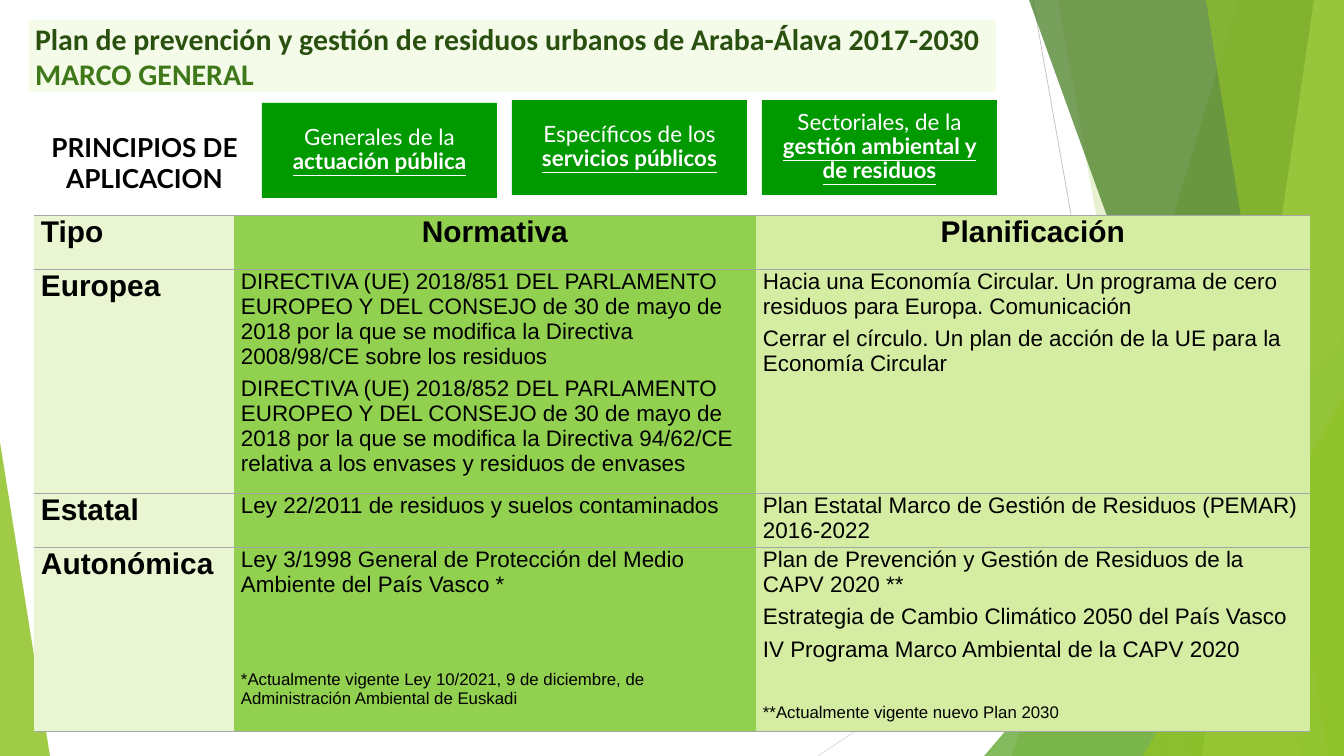
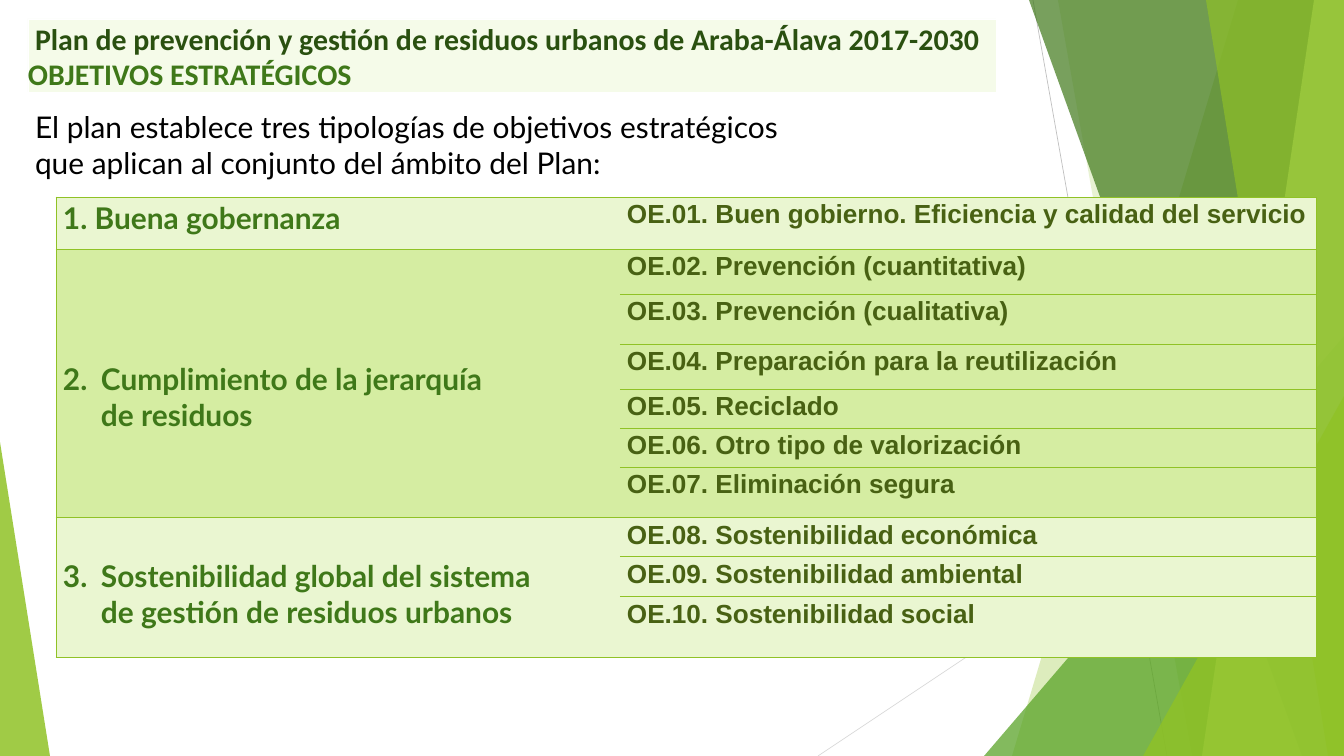
from lxml import etree
from pptx import Presentation
from pptx.dml.color import RGBColor
from pptx.enum.shapes import MSO_CONNECTOR, MSO_SHAPE
from pptx.enum.text import MSO_ANCHOR, MSO_AUTO_SIZE, PP_ALIGN
from pptx.oxml.ns import qn
from pptx.util import Pt

PX = 914400 / 67.2
WIDTH, HEIGHT = 1344, 756
RECTANGLE, TRIANGLE = MSO_SHAPE.RECTANGLE, MSO_SHAPE.ISOSCELES_TRIANGLE
STRAIGHT = MSO_CONNECTOR.STRAIGHT
LEFT, CENTER = PP_ALIGN.LEFT, PP_ALIGN.CENTER
TOP, MIDDLE, BOTTOM = MSO_ANCHOR.TOP, MSO_ANCHOR.MIDDLE, MSO_ANCHOR.BOTTOM
NO_AUTOFIT = MSO_AUTO_SIZE.NONE
NO_TABLE_STYLE = "{2D5ABB26-0587-4C30-8999-92F81FD0307C}"

BLACK, WHITE = "000000", "FFFFFF"
LIME, FOREST, DARK_GREEN, OLIVE = "90C226", "3F7819", "2A5010", "486113"
PALE, SOFT, STRONG = "EAF6D1", "D5EDA2", "92D050"
TITLE_BAND, CARD_GREEN, GREY = "F5FBE9", "009900", "A6A6A6"

PLAN_NAME = "Plan de prevención y gestión de residuos urbanos de Araba-Álava 2017-2030"


def px(length):
    return round(length * PX)


def box_px(*lengths):
    return [px(length) for length in lengths]


def rgb(color):
    return RGBColor.from_string(color)


def add_text(frame, text, size=24, font="Arial", color=BLACK, bold=False,
             underline=False, align=LEFT, before=0, after=0, spacing=None,
             indent=0, hanging=0, same_line=False):
    """Fill the empty first paragraph, add another, or extend the last one."""
    if frame.text and not same_line:
        paragraph = frame.add_paragraph()
    else:
        paragraph = frame.paragraphs[-1]
    if not same_line:
        properties = paragraph._p.get_or_add_pPr()
        properties.set("marL", str(px(indent)))
        properties.set("indent", str(-px(hanging)))
        paragraph.alignment = align
        paragraph.space_before, paragraph.space_after = Pt(before), Pt(after)
        if spacing:
            paragraph.line_spacing = spacing
    run = paragraph.add_run()
    run.text = text
    run.font.size, run.font.name = Pt(size), font
    run.font.bold, run.font.underline = bold, underline
    run.font.color.rgb = rgb(color)


def set_frame(frame, anchor=TOP, across=7, down=3):
    frame.word_wrap = True
    frame.auto_size = NO_AUTOFIT
    frame.vertical_anchor = anchor
    frame.margin_left = frame.margin_right = px(across)
    frame.margin_top = frame.margin_bottom = px(down)
    return frame


def paint(shape, color, opacity=100):
    shape.shadow.inherit = False
    shape.fill.solid()
    shape.fill.fore_color.rgb = rgb(color)
    shape.line.fill.background()
    if opacity < 100:
        tint = shape.element.spPr.find(qn("a:solidFill"))[0]
        etree.SubElement(tint, qn("a:alpha")).set("val", str(opacity * 1000))
    return shape


# Shared background, kept on the layout
def add_ray(shapes, start, end, color):
    ray = shapes.add_connector(STRAIGHT, *box_px(*start, *end))
    ray.line.color.rgb = rgb(color)
    ray.line.width = Pt(0.75)
    etree.SubElement(ray.element.spPr, qn("a:effectLst"))
    return ray


def add_blade(shapes, top_left, top_right, bottom_right, bottom_left, color, opacity):
    builder = shapes.build_freeform(top_left, 0, scale=PX)
    builder.add_line_segments([(top_right, 0), (bottom_right, HEIGHT),
                               (bottom_left, HEIGHT)], close=True)
    return paint(builder.convert_to_shape(), color, opacity)


def add_corner(shapes, left, top, width, apex, color, opacity):
    corner = shapes.add_shape(TRIANGLE, *box_px(left, top, width, HEIGHT - top))
    corner.adjustments[0] = apex
    return paint(corner, color, opacity)


def add_background(slide):
    shapes, layout = slide.shapes, slide.slide_layout
    for placeholder in list(layout.placeholders)[1:]:
        layout.shapes.element.remove(placeholder.element)
    facets = [
        add_ray(shapes, (1033, 0), (1167, HEIGHT), "BFBFBF"),
        add_ray(shapes, (1343, 406), (818, HEIGHT), "D9D9D9"),
        add_blade(shapes, 1238, WIDTH, WIDTH, 1012, LIME, 30),
        add_blade(shapes, 1058, WIDTH, WIDTH, 1192, LIME, 20),
        add_corner(shapes, 984, 336, 360, 1, "54A021", 72),
        add_blade(shapes, 1029, WIDTH, WIDTH, 1302, FOREST, 70),
        add_blade(shapes, 1314, WIDTH, WIDTH, 1202, "C0E474", 70),
        add_blade(shapes, 1206, WIDTH, WIDTH, 1328, LIME, 65),
        add_corner(shapes, 1143, 396, 201, 1, LIME, 80),
        add_corner(shapes, 0, 442, 50, 0, LIME, 85),
    ]
    for facet in facets:
        layout.shapes.element.append(facet.element)


# Title band
def add_title(slide, section, section_indent):
    title = slide.shapes.title
    title.left, title.top, title.width, title.height = box_px(28, 19, 968, 73)
    paint(title, TITLE_BAND)
    title.line.color.rgb = rgb(WHITE)
    title.line.width = Pt(0.75)
    frame = set_frame(title.text_frame, BOTTOM, 0, 0)
    heading = dict(size=32, font="Calibri", bold=True)
    add_text(frame, PLAN_NAME, color=DARK_GREEN, indent=7, **heading)
    add_text(frame, section, color=FOREST, indent=section_indent, **heading)


def add_note(slide, box, text, **style):
    note = slide.shapes.add_textbox(*box_px(*box))
    add_text(set_frame(note.text_frame), text, font="Lato", **style)


# Tables
def add_plain_table(slide, left, top, columns, rows):
    frame = slide.shapes.add_table(len(rows), len(columns), *box_px(
        left, top, sum(columns), sum(rows)))
    table = frame.table
    table.first_row = table.horz_banding = False
    next(frame.element.iter(qn("a:tableStyleId"))).text = NO_TABLE_STYLE
    for column, width in zip(table.columns, columns):
        column.width = px(width)
    for row, height in zip(table.rows, rows):
        row.height = px(height)
    return table


def format_cell(cell, fill, border, sides, down, extra_top=0, anchor=TOP):
    cell.margin_left = cell.margin_right = px(7)
    cell.margin_top, cell.margin_bottom = box_px(down + extra_top, down)
    cell.vertical_anchor = anchor
    cell.fill.solid()
    cell.fill.fore_color.rgb = rgb(fill)
    properties = cell._tc.get_or_add_tcPr()
    for position, side in enumerate(sides):
        edge = etree.Element(qn(f"a:ln{side}"), w=str(Pt(1)))
        solid = etree.SubElement(edge, qn("a:solidFill"))
        etree.SubElement(solid, qn("a:srgbClr")).set("val", border)
        properties.insert(position, edge)
    return cell.text_frame


# Slide 1: general framework
PRINCIPLES = [("Generales de la ", "actuación pública", 3),
              ("Específicos de los ", "servicios públicos", 0),
              ("Sectoriales, de la ", "gestión ambiental y de residuos", 0)]
HEADERS = ["Tipo", "Normativa", "Planificación"]
# Each scope: rules, plans, then footnotes as (text, space before)
FRAMEWORK = [
    ("Europea",
     ["DIRECTIVA (UE) 2018/851 DEL PARLAMENTO EUROPEO Y DEL CONSEJO de 30 de mayo "
      "de 2018 por la que se modifica la Directiva 2008/98/CE sobre los residuos",
      "DIRECTIVA (UE) 2018/852 DEL PARLAMENTO EUROPEO Y DEL CONSEJO de 30 de mayo "
      "de 2018 por la que se modifica la Directiva 94/62/CE relativa a los envases "
      "y residuos de envases"],
     ["Hacia una Economía Circular. Un programa de cero residuos para Europa. "
      "Comunicación",
      "Cerrar el círculo. Un plan de acción de la UE para la Economía Circular"]),
    ("Estatal",
     ["Ley 22/2011 de residuos y suelos contaminados"],
     ["Plan Estatal Marco de Gestión de Residuos (PEMAR) 2016-2022"]),
    ("Autonómica",
     ["Ley 3/1998 General de Protección del Medio Ambiente del País Vasco *",
      ("*Actualmente vigente Ley 10/2021, 9 de diciembre, de Administración "
       "Ambiental de Euskadi", 75)],
     ["Plan de Prevención y Gestión de Residuos de la CAPV 2020 **",
      "Estrategia de Cambio Climático 2050 del País Vasco",
      "IV Programa Marco Ambiental de la CAPV 2020",
      ("**Actualmente vigente nuevo Plan 2030", 40)]),
]


def add_principles(slide, left, top):
    card_width, card_height, step = 235, 95, 250
    for index, (scope, subject, drop) in enumerate(PRINCIPLES):
        card = paint(slide.shapes.add_shape(RECTANGLE, *box_px(
            left + index * step, top + drop, card_width, card_height)), CARD_GREEN)
        frame = set_frame(card.text_frame, MIDDLE, 17, 9)
        add_text(frame, scope, font="Lato", color=WHITE, align=CENTER, spacing=0.9)
        add_text(frame, subject, font="Lato", color=WHITE, bold=True,
                 underline=True, same_line=True)


def add_framework_table(slide, left, top):
    table = add_plain_table(slide, left, top, [200, 522, 554], [54, 224, 54, 184])
    frames = [[format_cell(cell, fill, GREY, "TB", 0)
               for cell, fill in zip(row.cells, (PALE, STRONG, SOFT))]
              for row in table.rows]
    for column, (frame, header) in enumerate(zip(frames[0], HEADERS)):
        add_text(frame, header, size=32, bold=True, after=4,
                 align=CENTER if column else LEFT)
    for (scope_frame, *entry_frames), (scope, *entries) in zip(frames[1:], FRAMEWORK):
        add_text(scope_frame, scope, size=32, bold=True, after=4)
        for frame, items in zip(entry_frames, entries):
            for index, item in enumerate(items):
                if isinstance(item, tuple):
                    add_text(frame, item[0], size=18, before=item[1], after=4)
                else:
                    add_text(frame, item, before=4 if index else 0, after=4)


def build_framework_slide(slide):
    add_principles(slide, 262, 100)
    add_title(slide, "MARCO GENERAL", 7)
    add_note(slide, (27, 128, 235, 70), "PRINCIPIOS DE APLICACION",
             size=28, bold=True, align=CENTER)
    add_framework_table(slide, 34, 215)


# Slide 2: strategic goals, as (lines, fill, extra top margin, goals)
GOAL_GROUPS = [
    (["1. Buena gobernanza"], PALE, 0,
     ["Buen gobierno. Eficiencia y calidad del servicio"]),
    (["2.\tCumplimiento de la jerarquía", "de residuos"], SOFT, 27,
     ["Prevención (cuantitativa)", "Prevención (cualitativa)",
      "Preparación para la reutilización", "Reciclado",
      "Otro tipo de valorización", "Eliminación segura"]),
    (["3.\tSostenibilidad global del sistema", "de gestión de residuos urbanos"],
     PALE, 12,
     ["Sostenibilidad económica", "Sostenibilidad ambiental",
      "Sostenibilidad social"]),
]


def add_goals_table(slide, left, top):
    table = add_plain_table(slide, left, top, [564, 696],
                            [52, 45, 50, 45, 39, 39, 51, 39, 40, 61])
    row = 0
    for lines, fill, extra_top, goals in GOAL_GROUPS:
        group, grouped = table.cell(row, 0), len(goals) > 1
        if grouped:
            group.merge(table.cell(row + len(goals) - 1, 0))
        frame = format_cell(group, fill, LIME, "LTB", 3, extra_top,
                            MIDDLE if grouped else TOP)
        for index, line in enumerate(lines):
            add_text(frame, line, size=32, font="Lato", color=FOREST, bold=True,
                     indent=38 if grouped else 0,
                     hanging=38 if grouped and index == 0 else 0)
        for goal in goals:
            frame = format_cell(table.cell(row, 1), fill, LIME, "RTB", 3)
            row += 1
            add_text(frame, f"OE.{row:02}. {goal}", size=28, color=OLIVE, bold=True)


def build_goals_slide(slide):
    add_note(slide, (28, 106, 796, 369),
             "El plan establece tres tipologías de objetivos estratégicos que "
             "aplican al conjunto del ámbito del Plan:", size=32)
    add_title(slide, "OBJETIVOS ESTRATÉGICOS", 0)
    add_goals_table(slide, 56, 197)


def main():
    deck = Presentation()
    deck.slide_width, deck.slide_height = box_px(WIDTH, HEIGHT)
    title_only = deck.slide_layouts[5]
    framework = deck.slides.add_slide(title_only)
    add_background(framework)
    build_framework_slide(framework)
    build_goals_slide(deck.slides.add_slide(title_only))
    deck.save("out.pptx")


if __name__ == "__main__":
    main()
